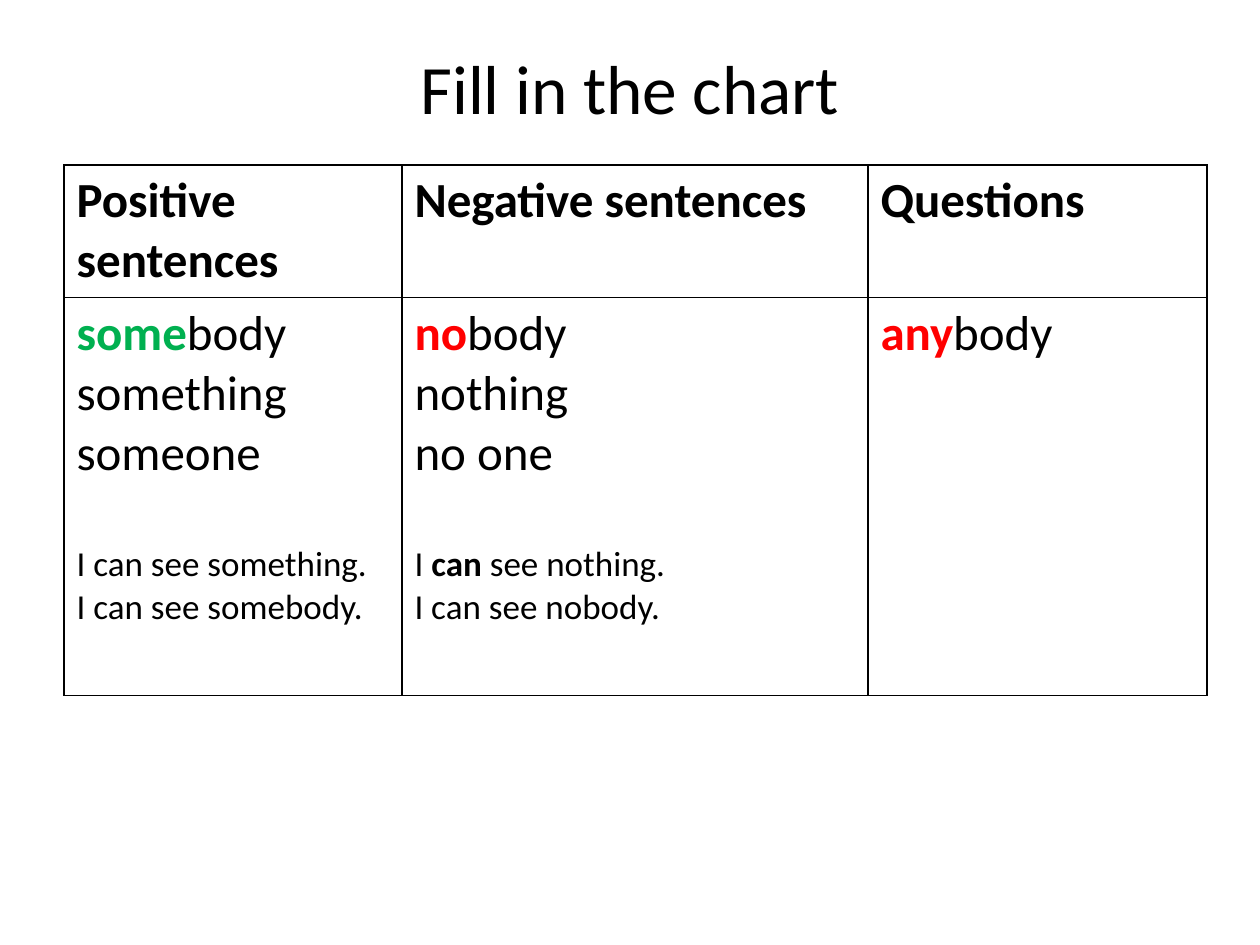
from lxml import etree
from pptx import Presentation
from pptx import util as u
from pptx.dml import color
from pptx.enum import text
from pptx.oxml import ns

PX = 914400 / 126
BLACK, GREEN, RED = "000000", "00B050", "FF0000"
FONT = "Calibri"


def px(length):
    return u.Emu(round(length * PX))


def rgb(value):
    return color.RGBColor.from_string(value)


def add_text(paragraph, content, size=28, bold=False, fill=BLACK):
    run = paragraph.add_run()
    run.text = content
    run.font.name = FONT
    run.font.size = u.Pt(size)
    run.font.bold = bold
    run.font.color.rgb = rgb(fill)


def line(*runs, size=28, before=0):
    return {"runs": runs, "size": size, "before": before}


def heading(content):
    return [line((content, {"bold": True}))]


def word(prefix, ending, fill):
    return line((prefix, {"bold": True, "fill": fill}), (ending, {}))


def example(*runs, before=0):
    return line(*runs, size=20, before=before)


class SlideBuilder:
    """Holds the table style and the current slide."""

    def __init__(self, presentation, border=BLACK, border_width=1):
        self.slide = presentation.slides.add_slide(presentation.slide_layouts[5])
        self.border = border
        self.border_width = u.Pt(border_width)

    def title(self, content, left, top, width, height):
        shape = self.slide.shapes.title
        shape.left, shape.top, shape.width, shape.height = map(px, (left, top, width, height))
        frame = shape.text_frame
        frame.auto_size = text.MSO_AUTO_SIZE.NONE
        frame.vertical_anchor = text.MSO_ANCHOR.MIDDLE
        paragraph = frame.paragraphs[0]
        paragraph.alignment = text.PP_ALIGN.CENTER
        add_text(paragraph, content, size=39.6)

    def table(self, rows, left, top, widths, heights):
        frame = self.slide.shapes.add_table(
            len(heights), len(widths), px(left), px(top), px(sum(widths)), px(sum(heights)))
        table = frame.table
        table.first_row = table.horz_banding = False
        for column, width in zip(table.columns, widths):
            column.width = px(width)
        for row, height, contents in zip(table.rows, heights, rows):
            row.height = px(height)
            for cell, lines in zip(row.cells, contents):
                self.cell(cell, lines)

    def cell(self, cell, lines):
        cell.fill.background()
        self.outline(cell)
        frame = cell.text_frame
        for index, item in enumerate(lines):
            paragraph = frame.add_paragraph() if index else frame.paragraphs[0]
            if item["before"]:
                paragraph.space_before = u.Pt(item["before"])
            for content, style in item["runs"]:
                add_text(paragraph, content, size=item["size"], **style)

    def outline(self, cell):
        properties = cell._tc.get_or_add_tcPr()
        for index, side in enumerate(("a:lnL", "a:lnR", "a:lnT", "a:lnB")):
            edge = etree.Element(ns.qn(side), w=str(self.border_width))
            fill = etree.SubElement(edge, ns.qn("a:solidFill"))
            etree.SubElement(fill, ns.qn("a:srgbClr"), val=self.border)
            properties.insert(index, edge)


def main():
    presentation = Presentation()
    presentation.slide_width, presentation.slide_height = px(1260), px(945)
    builder = SlideBuilder(presentation)
    builder.title("Fill in the chart", 63, 38, 1134, 97)

    headings = [heading(name) for name in
                ("Positive sentences", "Negative sentences", "Questions")]
    positive = [
        word("some", "body", GREEN),
        line(("something", {})),
        line(("someone", {})),
        example(("I can see something.", {}), before=34),
        example(("I can see somebody.", {})),
    ]
    negative = [
        word("no", "body", RED),
        line(("nothing", {})),
        line(("no one", {})),
        example(("I ", {}), ("can", {"bold": True}), (" see nothing.", {}), before=34),
        example(("I can see nobody.", {})),
    ]
    questions = [word("any", "body", RED)]
    builder.table([headings, [positive, negative, questions]],
                  64, 165, widths=(338, 466, 339), heights=(132, 398))
    presentation.save("out.pptx")


if __name__ == "__main__":
    main()
